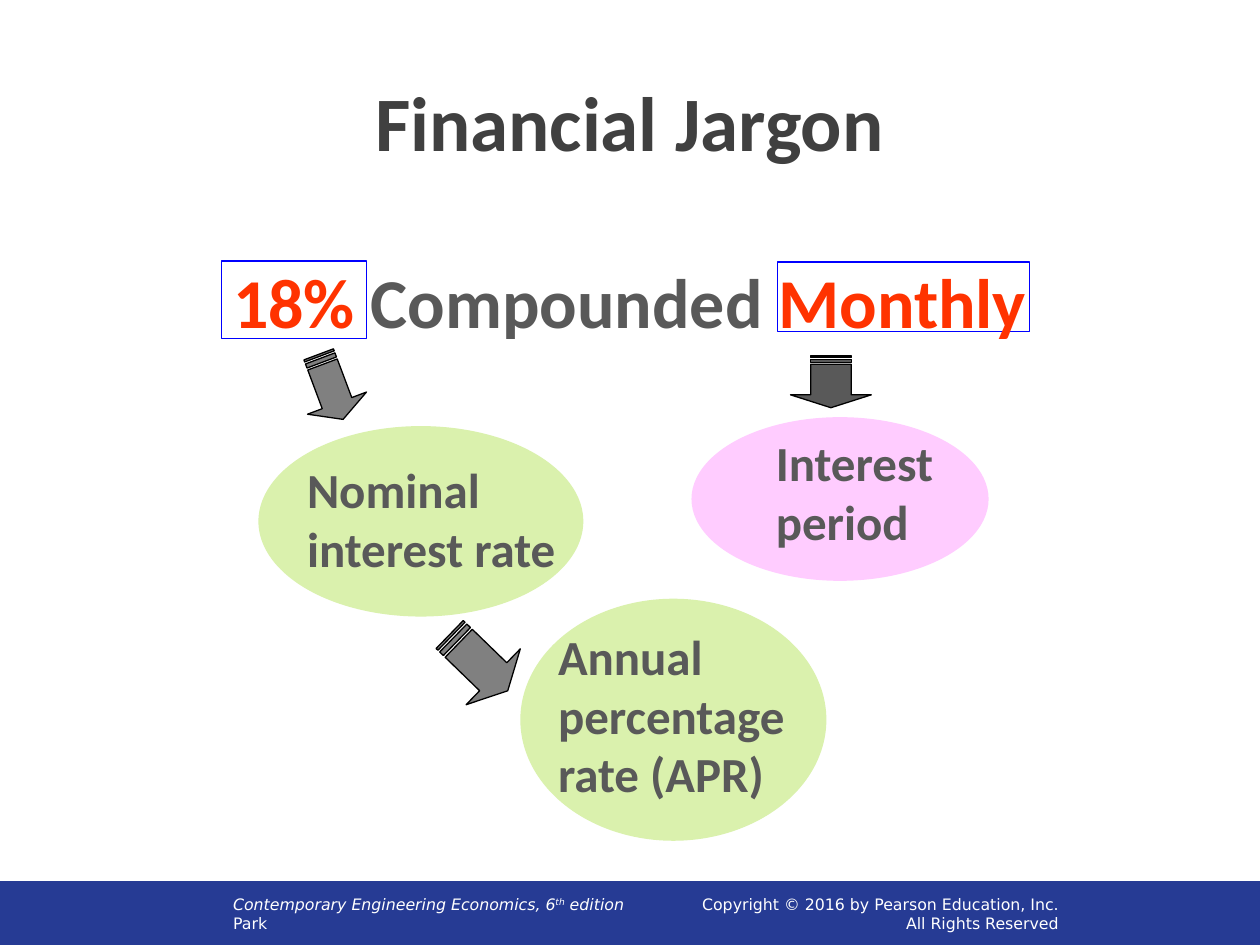
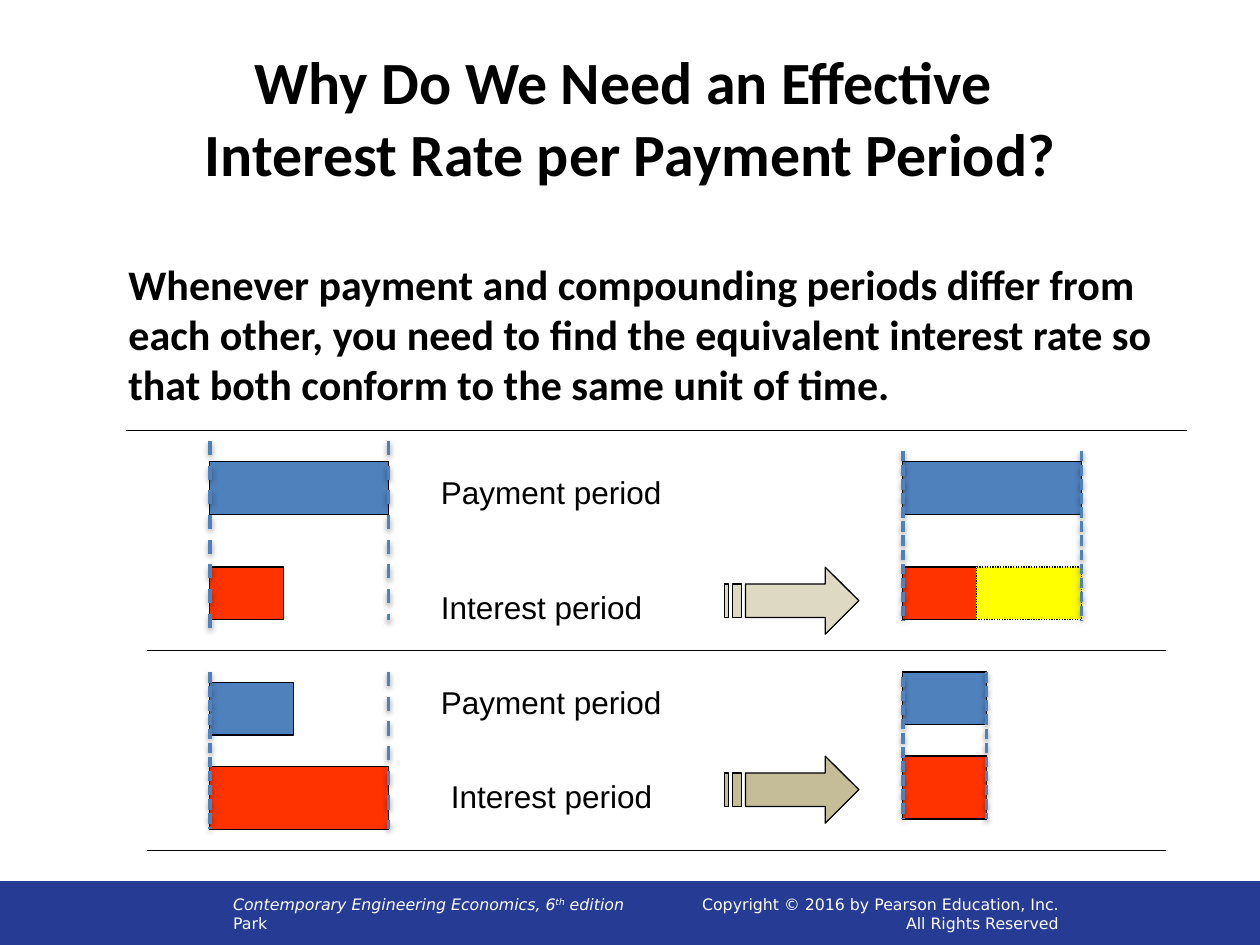
from lxml import etree
from pptx import Presentation
from pptx.dml.color import RGBColor
from pptx.enum.dml import MSO_LINE
from pptx.enum.shapes import MSO_CONNECTOR, MSO_SHAPE
from pptx.enum.text import MSO_ANCHOR, MSO_AUTO_SIZE, PP_ALIGN
from pptx.oxml.ns import qn
from pptx.util import Cm, Pt

RECTANGLE, OVAL = MSO_SHAPE.RECTANGLE, MSO_SHAPE.OVAL
STRAIGHT = MSO_CONNECTOR.STRAIGHT
DASH, SHORT_DASH, DOTTED = MSO_LINE.DASH, MSO_LINE.SQUARE_DOT, MSO_LINE.ROUND_DOT
LEFT, CENTER, RIGHT = PP_ALIGN.LEFT, PP_ALIGN.CENTER, PP_ALIGN.RIGHT
TOP, MIDDLE = MSO_ANCHOR.TOP, MSO_ANCHOR.MIDDLE

HEADING_FONT, LABEL_FONT, FOOTER_FONT = "Calibri", "Arial", "DejaVu Sans"
BLACK, WHITE, NAVY = "000000", "FFFFFF", "263B94"
CHARCOAL, GREY, MID_GREY = "404040", "595959", "808080"
GREEN, PINK, FRAME_BLUE = "DAF1AD", "FFCCFF", "0000FF"
BLUE, RED, YELLOW = "4F81BD", "FF3300", "FFFF00"
LIGHT_TAN, TAN = "DDD9C3", "C4BD97"

# Bar grid of the second slide, in centimetres
LEFT_BARS, RIGHT_BARS = 4.23, 18.2
LONG, MEDIUM, SHORT = 3.6, 1.69, 1.48
LOW, HIGH = 1.06, 1.27


def rgb(colour):
    return RGBColor.from_string(colour)


def lengths(*values):
    return [Cm(value) for value in values]


def style_shape(shape, fill=None, line=None):
    shape.shadow.inherit = False
    if fill:
        shape.fill.solid()
        shape.fill.fore_color.rgb = rgb(fill)
    else:
        shape.fill.background()
    if line:
        shape.line.color.rgb = rgb(line)
        shape.line.width = Pt(0.75)
    else:
        shape.line.fill.background()


def add_shape(slide, kind, place, fill=None, line=None):
    shape = slide.shapes.add_shape(kind, *lengths(*place))
    style_shape(shape, fill, line)
    return shape


def add_text(slide, place, text, size, colour, font=HEADING_FONT, bold=False,
             align=LEFT, anchor=TOP, wrap=False):
    box = slide.shapes.add_textbox(*lengths(*place))
    frame = box.text_frame
    frame.word_wrap = wrap
    frame.auto_size = MSO_AUTO_SIZE.NONE if wrap else MSO_AUTO_SIZE.SHAPE_TO_FIT_TEXT
    frame.vertical_anchor = anchor
    frame.text = text
    for paragraph in frame.paragraphs:
        paragraph.alignment = align
        paragraph.font.size = Pt(size)
        paragraph.font.name = font
        paragraph.font.bold = bold
        paragraph.font.color.rgb = rgb(colour)
    return frame


def add_run(paragraph, text, colour, italic=False, superscript=False):
    run = paragraph.add_run()
    run.text = text
    run.font.color.rgb = rgb(colour)
    run.font.italic = italic
    if superscript:
        run._r.get_or_add_rPr().set("baseline", "30000")


def add_line(slide, start, end, colour=BLACK, width=0.75):
    line = slide.shapes.add_connector(STRAIGHT, *lengths(*start, *end))
    line.line.color.rgb = rgb(colour)
    line.line.width = Pt(width)
    effects = etree.SubElement(line._element.spPr, qn("a:effectLst"))
    return line, effects


def add_guide(slide, x, top, bottom, dash):
    """Dashed vertical line with a soft shadow below it."""
    guide, effects = add_line(slide, (x, top), (x, bottom), BLUE, 2)
    guide.line.dash_style = dash
    shadow = etree.SubElement(effects, qn("a:outerShdw"), blurRad="40000",
                              dist="20000", dir="5400000", rotWithShape="0")
    colour = etree.SubElement(shadow, qn("a:srgbClr"), val=BLACK)
    etree.SubElement(colour, qn("a:alpha"), val="38000")


def add_striped_arrow(slide, center, length, thickness, fill, angle=0):
    """Arrow with two tail stripes; its outline is given in parts of its size."""
    def outline(points):
        return [(Cm(center[0] + (x - 0.5) * length),
                 Cm(center[1] + (y - 0.5) * thickness)) for x, y in points]

    def stripe(start, end):
        return [(start, 0.25), (start, 0.75), (end, 0.75), (end, 0.25)]

    body = [(0.75, 0), (0.75, 0.25), (5 / 32, 0.25), (5 / 32, 0.75),
            (0.75, 0.75), (0.75, 1), (1, 0.5)]
    first, *rest = outline(body)
    builder = slide.shapes.build_freeform(*first)
    builder.add_line_segments(rest)
    for points in (stripe(1 / 16, 1 / 8), stripe(0, 1 / 32)):
        first, *rest = outline(points)
        builder.move_to(*first)
        builder.add_line_segments(rest)
    arrow = builder.convert_to_shape()
    style_shape(arrow, fill, BLACK)
    arrow.rotation = angle


def add_title(slide, top, text, size, colour):
    add_text(slide, (1.27, top, 22.86, 3.18), text, size, colour, bold=True,
             align=CENTER, anchor=MIDDLE, wrap=True)


def add_footer(slide):
    add_shape(slide, RECTANGLE, (0, 17.78, 25.43, 1.27), NAVY, NAVY)
    book = add_text(slide, (4.45, 17.78, 15.65, 1.27), "\nPark", 9, WHITE,
                    FOOTER_FONT, anchor=MIDDLE, wrap=True).paragraphs[0]
    add_run(book, "Contemporary Engineering Economics, 6", WHITE, italic=True)
    add_run(book, "th", WHITE, italic=True, superscript=True)
    add_run(book, " edition", WHITE, italic=True)
    add_text(slide, (12.5, 17.78, 9.09, 1.27),
             "Copyright © 2016 by Pearson Education, Inc.\nAll Rights Reserved",
             9, WHITE, FOOTER_FONT, align=RIGHT, anchor=MIDDLE, wrap=True)


def new_slide(presentation):
    slide = presentation.slides.add_slide(presentation.slide_layouts[6])
    add_footer(slide)
    return slide


def build_jargon_slide(presentation):
    slide = new_slide(presentation)
    add_title(slide, 0.84, "Financial Jargon", 44, CHARCOAL)

    terms = [
        ((10.49, 12.07, 6.17, 4.88), GREEN,
         (11, 12.5, 5.13, 3.84), "Annual\npercentage\nrate (APR)"),
        ((5.21, 8.59, 6.55, 3.84), GREEN,
         (5.94, 9.14, 5.59, 2.64), "Nominal\ninterest rate"),
        ((13.94, 8.41, 5.99, 3.3), PINK,
         (15.39, 8.59, 3.96, 2.64), "Interest\nperiod"),
    ]
    for oval_place, fill, text_place, text in terms:
        add_shape(slide, OVAL, oval_place, fill)
        add_text(slide, text_place, text, 28, GREY, bold=True)

    for frame_place in ((4.47, 5.26, 2.92, 1.57), (15.67, 5.28, 5.08, 1.4)):
        add_shape(slide, RECTANGLE, frame_place, line=FRAME_BLUE)

    add_striped_arrow(slide, (16.75, 7.7), 1.04, 1.63, GREY, 90)
    add_striped_arrow(slide, (6.67, 7.8), 1.4, 1.27, MID_GREY, 69.4)
    add_striped_arrow(slide, (9.65, 13.36), 1.63, 1.57, MID_GREY, 44.1)

    phrase = add_text(slide, (4.45, 5.08, 16.69, 1.96), "", 40, GREY,
                      bold=True).paragraphs[0]
    add_run(phrase, "18%", RED)
    add_run(phrase, " Compounded ", GREY)
    add_run(phrase, "Monthly", RED)


def build_periods_slide(presentation):
    slide = new_slide(presentation)
    add_title(slide, 0.76,
              "Why Do We Need an Effective \vInterest Rate per Payment Period?",
              34.2, BLACK)
    add_text(slide, (2.34, 5.08, 21.51, 3.33),
             "Whenever payment and compounding periods differ from\n"
             "each other, you need to find the equivalent interest rate so\n"
             "that both conform to the same unit of time.",
             24, BLACK, bold=True)

    for left, right, y in ((2.54, 23.92, 8.68), (2.96, 23.5, 13.12),
                           (2.96, 23.5, 17.15)):
        add_line(slide, (left, y), (right, y))

    bars = [
        (LEFT_BARS, 9.31, LONG, LOW, BLUE),
        (LEFT_BARS, 11.43, SHORT, LOW, RED),
        (LEFT_BARS, 13.76, MEDIUM, LOW, BLUE),
        (LEFT_BARS, 15.45, LONG, HIGH, RED),
        (RIGHT_BARS, 9.31, LONG, LOW, BLUE),
        (RIGHT_BARS, 11.43, SHORT, LOW, RED),
        (RIGHT_BARS, 13.55, MEDIUM, LOW, BLUE),
        (RIGHT_BARS, 15.24, MEDIUM, HIGH, RED),
    ]
    for *place, fill in bars:
        add_shape(slide, RECTANGLE, place, fill, BLACK)
    extension = add_shape(slide, RECTANGLE,
                          (RIGHT_BARS + SHORT, 11.43, LONG - SHORT, LOW),
                          YELLOW, BLACK)
    extension.line.dash_style = DOTTED

    labels = [
        (8.64, 9.42, 4.95, "Payment period"),
        (8.64, 11.73, 4.57, "Interest period"),
        (8.64, 13.64, 4.95, "Payment period"),
        (8.84, 15.54, 4.57, "Interest period"),
    ]
    for left, top, width, text in labels:
        add_text(slide, (left, top, width, 1.02), text, 18, BLACK, LABEL_FONT)

    for y, fill in ((12.11, LIGHT_TAN), (15.92, TAN)):
        add_striped_arrow(slide, (15.96, y), 2.71, 1.35, fill)

    guides = [
        (LEFT_BARS, 8.89, 12.75, DASH),
        (LEFT_BARS + LONG, 8.89, 12.5, DASH),
        (LEFT_BARS, 13.55, 16.71, SHORT_DASH),
        (LEFT_BARS + LONG, 13.55, 16.71, DASH),
        (RIGHT_BARS, 9.09, 12.5, SHORT_DASH),
        (RIGHT_BARS + LONG, 9.09, 12.5, SHORT_DASH),
        (RIGHT_BARS, 13.64, 16.51, SHORT_DASH),
        (RIGHT_BARS + MEDIUM, 13.55, 16.51, SHORT_DASH),
    ]
    for x, top, bottom, dash in guides:
        add_guide(slide, x, top, bottom, dash)


def main():
    presentation = Presentation()
    presentation.slide_width, presentation.slide_height = lengths(25.4, 19.05)
    build_jargon_slide(presentation)
    build_periods_slide(presentation)
    presentation.save("out.pptx")


if __name__ == "__main__":
    main()
